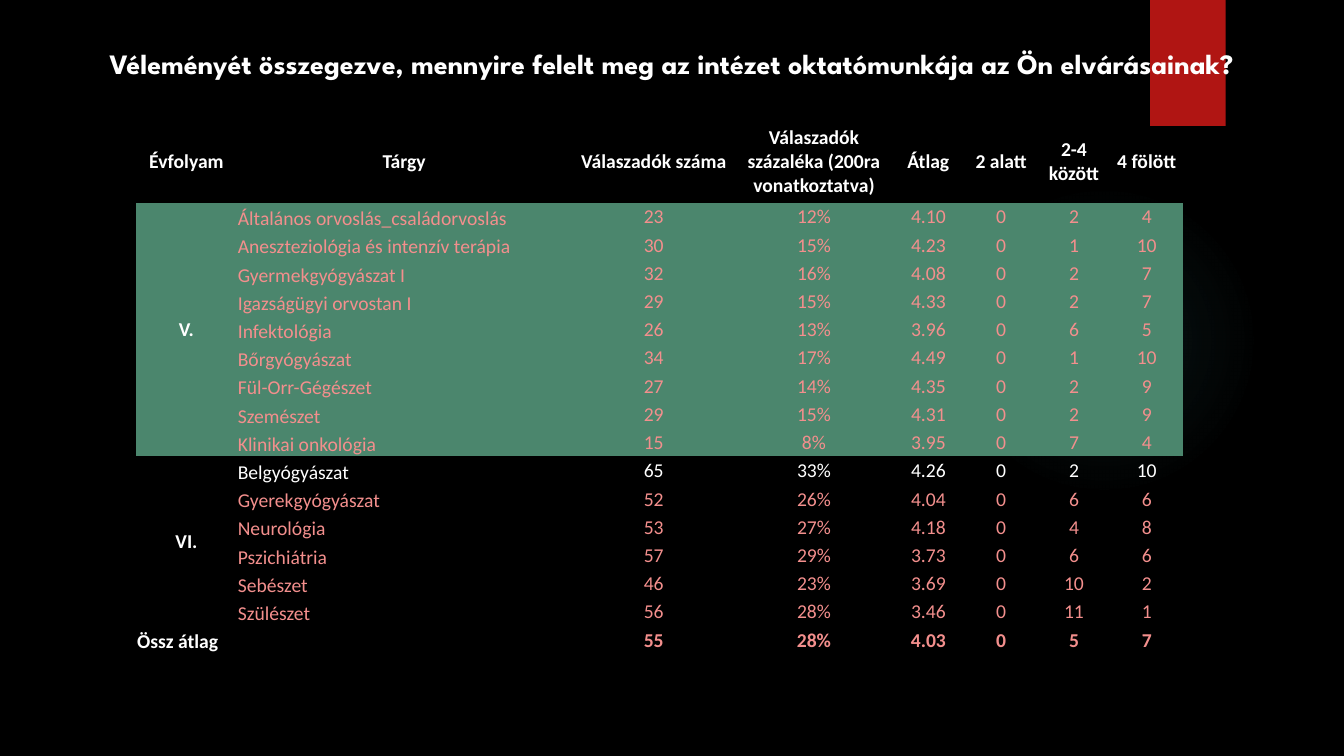
from lxml import etree
from pptx import Presentation
from pptx.dml.color import RGBColor
from pptx.enum import shapes, text
from pptx.oxml import ns
from pptx.util import Pt

COLORS = {"black": "000000", "white": "FFFFFF", "red": "B01513",
          "green": "4B866D", "pink": "F38F8D", "glow": "50B9C1"}

TITLE = ("Véleményét összegezve, mennyire felelt meg az intézet "
         "oktatómunkája az Ön elvárásainak?")
HEADER = ["Évfolyam", "Tárgy", "Válaszadók száma",
          "Válaszadók százaléka (200ra vonatkoztatva)",
          "Átlag", "2 alatt", "2-4 között", "4 fölött"]
YEARS = {
    "V.": [
        ("Általános orvoslás_családorvoslás", "23", "12%", "4.10", "0", "2", "4"),
        ("Aneszteziológia és intenzív terápia", "30", "15%", "4.23", "0", "1", "10"),
        ("Gyermekgyógyászat I", "32", "16%", "4.08", "0", "2", "7"),
        ("Igazságügyi orvostan I", "29", "15%", "4.33", "0", "2", "7"),
        ("Infektológia", "26", "13%", "3.96", "0", "6", "5"),
        ("Bőrgyógyászat", "34", "17%", "4.49", "0", "1", "10"),
        ("Fül-Orr-Gégészet", "27", "14%", "4.35", "0", "2", "9"),
        ("Szemészet", "29", "15%", "4.31", "0", "2", "9"),
        ("Klinikai onkológia", "15", "8%", "3.95", "0", "7", "4"),
    ],
    "VI.": [
        ("Belgyógyászat", "65", "33%", "4.26", "0", "2", "10"),
        ("Gyerekgyógyászat", "52", "26%", "4.04", "0", "6", "6"),
        ("Neurológia", "53", "27%", "4.18", "0", "4", "8"),
        ("Pszichiátria", "57", "29%", "3.73", "0", "6", "6"),
        ("Sebészet", "46", "23%", "3.69", "0", "10", "2"),
        ("Szülészet", "56", "28%", "3.46", "0", "11", "1"),
    ],
}
TOTAL = ["Össz átlag", "", "55", "28%", "4.03", "0", "5", "7"]
HIGHLIGHT = "Belgyógyászat"
COL_WIDTHS = [72, 239, 117.5, 111.5] + [52] * 4
HEADER_HEIGHT, ROW_HEIGHT = 59, 20.16
NO_STYLE = "{2D5ABB26-0587-4C30-8999-92F81FD0307C}"


def rgb(name):
    return RGBColor.from_string(COLORS[name])


def set_font(p, name, size, color, bold):
    p.font.name, p.font.size, p.font.bold = name, Pt(size), bold
    p.font.color.rgb = rgb(color)


def add_block(s, kind, left, top, width, height, color):
    sp = s.shapes.add_shape(kind, Pt(left), Pt(top), Pt(width), Pt(height))
    sp.shadow.inherit = False
    sp.fill.solid()
    sp.fill.fore_color.rgb = rgb(color)
    sp.line.fill.background()
    return sp


def fade_out(sp, color, stops):
    """Replace the solid fill by a radial one; stops are (position, opacity) in %."""
    marks = "".join(
        f'<a:gs pos="{pos * 1000}"><a:srgbClr val="{COLORS[color]}">'
        f'<a:alpha val="{alpha * 1000}"/></a:srgbClr></a:gs>' for pos, alpha in stops)
    grad = etree.fromstring(
        f'<a:gradFill {ns.nsdecls("a")}><a:gsLst>{marks}</a:gsLst><a:path path="circle">'
        '<a:fillToRect l="50000" t="50000" r="50000" b="50000"/></a:path></a:gradFill>')
    solid = sp.element.spPr.find(ns.qn("a:solidFill"))
    solid.getparent().replace(solid, grad)


def add_title(s):
    title = s.shapes.title
    title.left, title.top, title.width, title.height = Pt(0), Pt(29.5), Pt(960), Pt(31.5)
    tf = title.text_frame
    tf.text, tf.word_wrap = TITLE, True
    tf.vertical_anchor = text.MSO_ANCHOR.TOP
    p = tf.paragraphs[0]
    p.alignment = text.PP_ALIGN.CENTER
    set_font(p, "League Spartan", 20, "white", True)
    title.element.getparent().append(title.element)  # bring to front


def fill_cell(cell, content, color, bold, left=False, fill=None):
    cell.margin_left = cell.margin_right = cell.margin_top = Pt(0.7)
    cell.margin_bottom = Pt(0)
    cell.vertical_anchor = text.MSO_ANCHOR.BOTTOM if left else text.MSO_ANCHOR.MIDDLE
    if fill:
        cell.fill.solid()
        cell.fill.fore_color.rgb = rgb(fill)
    else:
        cell.fill.background()
    p = cell.text_frame.paragraphs[0]
    if content:
        p.add_run().text = content
    else:  # keeps an empty cell from stretching its row
        etree.SubElement(p._p, ns.qn("a:endParaRPr"), sz="1400")
    p.alignment = text.PP_ALIGN.LEFT if left else text.PP_ALIGN.CENTER
    set_font(p, "Calibri", 14, color, bold)


def add_borders(cell, sides):
    """Sides are letters in the order L, R, T, B."""
    tcPr = cell._tc.get_or_add_tcPr()
    for i, side in enumerate(sides):
        tcPr.insert(i, etree.fromstring(
            f'<a:ln{side} {ns.nsdecls("a")} w="19050"><a:solidFill>'
            f'<a:srgbClr val="{COLORS["black"]}"/></a:solidFill></a:ln{side}>'))


def add_results(s):
    rows = 2 + sum(len(subjects) for subjects in YEARS.values())
    last = rows - 1
    frame = s.shapes.add_table(rows, len(HEADER), Pt(97.2), Pt(85.7), Pt(sum(COL_WIDTHS)),
                               Pt(HEADER_HEIGHT + ROW_HEIGHT * last))
    table = frame.table
    table.first_row = table.horz_banding = False
    table._tbl.tblPr.find(ns.qn("a:tableStyleId")).text = NO_STYLE
    for col, width in zip(table.columns, COL_WIDTHS):
        col.width = Pt(width)
    for i, row in enumerate(table.rows):
        row.height = Pt(ROW_HEIGHT if i else HEADER_HEIGHT)

    # Header row
    for c, label in enumerate(HEADER):
        fill_cell(table.cell(0, c), label, "white", True)

    # One block of subjects per year
    r = 1
    for year, subjects in YEARS.items():
        first = r
        fill = "green" if year == "V." else None
        for subject in subjects:
            color = "white" if subject[0] == HIGHLIGHT else "pink"
            fill_cell(table.cell(r, 0), year if r == first else "", "white", True, fill=fill)
            for c, value in enumerate(subject, 1):
                fill_cell(table.cell(r, c), value, color, False, c == 1, fill)
            r += 1
        table.cell(first, 0).merge(table.cell(r - 1, 0))
    add_borders(table.cell(first, 0), "B")

    # Total row
    for c, value in enumerate(TOTAL):
        fill_cell(table.cell(last, c), value, "pink" if c else "white", True, c < 2)
        if c:
            add_borders(table.cell(last - 1, c), "B")
        edge = {0: "L", len(TOTAL) - 1: "R"}.get(c, "")
        add_borders(table.cell(last, c), edge + "TB")


def main():
    prs = Presentation()
    prs.slide_width, prs.slide_height = Pt(960), Pt(540)
    s = prs.slides.add_slide(prs.slide_layouts[5])
    s.background.fill.solid()
    s.background.fill.fore_color.rgb = rgb("black")

    # Backdrop
    glow = add_block(s, shapes.MSO_SHAPE.OVAL, 677.5, 131.8, 221.8, 221.8, "glow")
    fade_out(glow, "glow", [(0, 7), (36, 6), (69, 0)])
    add_block(s, shapes.MSO_SHAPE.RECTANGLE, 821.5, 0, 54, 90, "red")

    # Content
    add_title(s)
    add_results(s)
    prs.save("out.pptx")


if __name__ == "__main__":
    main()
